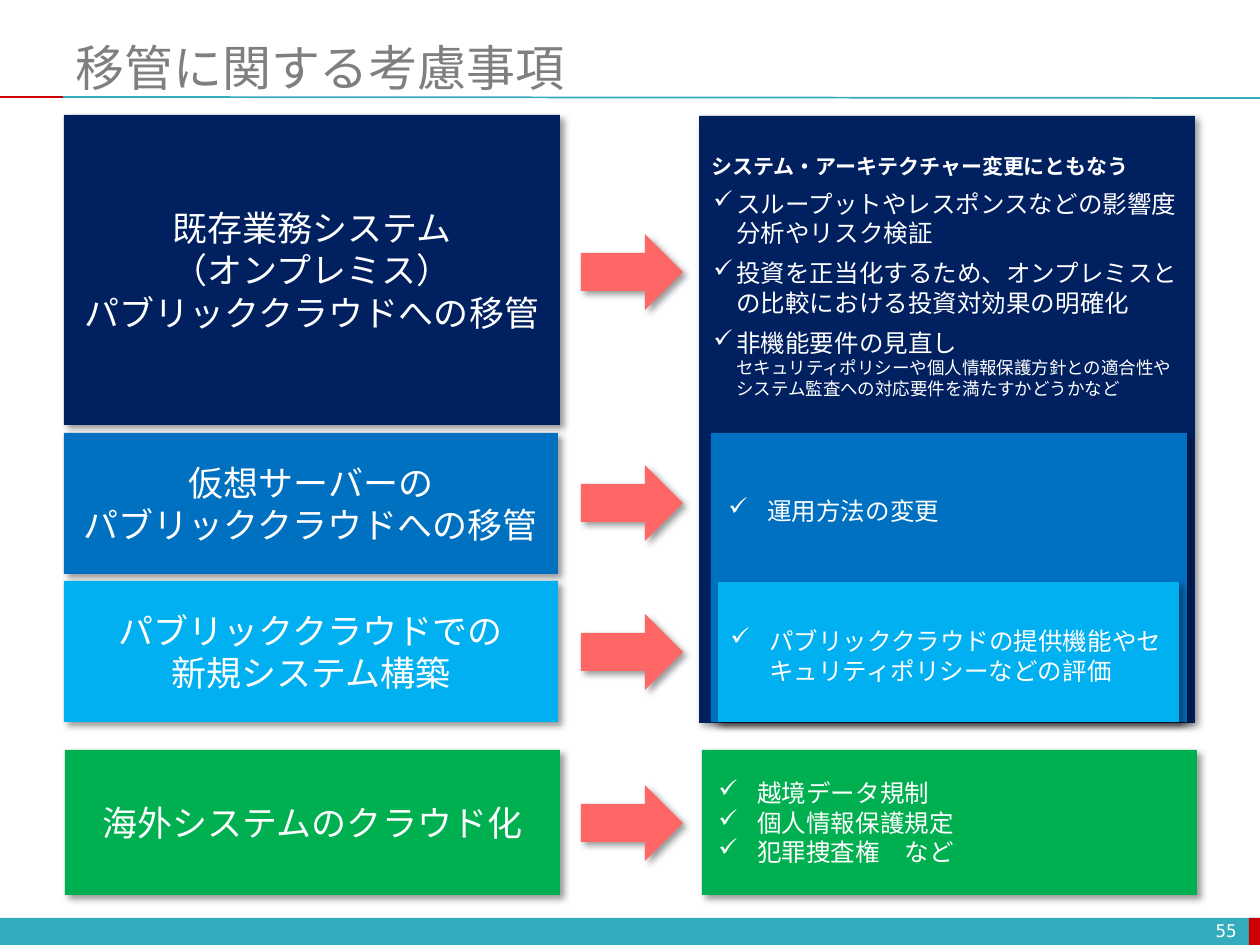
from dataclasses import dataclass

import pptx
import pptx.dml.color
import pptx.enum.shapes
import pptx.enum.text
import pptx.oxml
import pptx.oxml.ns
import pptx.util
from pptx.oxml.xmlchemy import OxmlElement

RGB = pptx.dml.color.RGBColor
KIND = pptx.enum.shapes.MSO_SHAPE
ALIGN = pptx.enum.text.PP_ALIGN
ANCHOR = pptx.enum.text.MSO_ANCHOR

WHITE = RGB(0xFF, 0xFF, 0xFF)
GRAY = RGB(0x7F, 0x7F, 0x7F)
TEAL = RGB(0x33, 0xAC, 0xBD)
RED = RGB(0xCC, 0x00, 0x00)
NAVY = RGB(0x00, 0x20, 0x60)
BLUE = RGB(0x00, 0x70, 0xC0)
SKY = RGB(0x00, 0xB0, 0xF0)
GREEN = RGB(0x00, 0xB0, 0x50)
CORAL = RGB(0xFF, 0x66, 0x66)

FACE = "Noto Sans CJK JP"
SCALE = 914400 / 126
SHADOW = (
    f'<a:effectLst {pptx.oxml.ns.nsdecls("a")}>'
    '<a:outerShdw blurRad="50800" dist="38100" dir="2700000" algn="tl" rotWithShape="0">'
    '<a:srgbClr val="000000"><a:alpha val="40000"/></a:srgbClr>'
    "</a:outerShdw></a:effectLst>"
)


@dataclass(frozen=True)
class Box:
    left: int
    top: int
    width: int
    height: int


@dataclass(frozen=True)
class Line:
    text: str
    size: int = 14
    bold: bool = False
    mark: bool = False
    left: int = 0
    hang: int = 0
    gap: int = 0


@dataclass(frozen=True)
class Step:
    box: Box
    fill: RGB
    lines: tuple[str, ...]
    arrow: int


STEPS = (
    Step(Box(64, 115, 496, 310), NAVY,
         ("既存業務システム", "（オンプレミス）", "パブリッククラウドへの移管"), 234),
    Step(Box(64, 433, 494, 141), BLUE,
         ("仮想サーバーの", "パブリッククラウドへの移管"), 465),
    Step(Box(64, 581, 494, 141), SKY,
         ("パブリッククラウドでの", "新規システム構築"), 614),
    Step(Box(65, 750, 495, 145), GREEN, ("海外システムのクラウド化",), 785),
)

LAYERS = (
    (Box(699, 116, 496, 607), NAVY),
    (Box(711, 433, 476, 289), BLUE),
    (Box(718, 582, 461, 140), SKY),
)


def px(count: int) -> int:
    return round(count * SCALE)


def place(box: Box) -> tuple[int, ...]:
    return tuple(px(n) for n in (box.left, box.top, box.width, box.height))


def block(slide, box: Box, fill: RGB, kind=KIND.RECTANGLE, shade: bool = True):
    """Add a borderless filled shape, by default with a drop shadow."""
    shape = slide.shapes.add_shape(kind, *place(box))
    shape.fill.solid()
    shape.fill.fore_color.rgb = fill
    shape.line.fill.background()
    if shade:
        shape._element.spPr.append(pptx.oxml.parse_xml(SHADOW))
    else:
        shape.shadow.inherit = False
    return shape


def rule(slide, start: tuple[int, int], end: tuple[int, int], color: RGB) -> None:
    line = slide.shapes.add_connector(
        pptx.enum.shapes.MSO_CONNECTOR.STRAIGHT, *map(px, start + end))
    line.line.color.rgb = color
    line.line.width = pptx.util.Pt(1)
    line._element.spPr.append(OxmlElement("a:effectLst"))


def write(shape, lines, *, color: RGB = WHITE, face: str = FACE,
          align=ALIGN.LEFT, anchor=ANCHOR.MIDDLE) -> None:
    frame = shape.text_frame
    frame.word_wrap = True
    frame.vertical_anchor = anchor
    for index, line in enumerate(lines):
        para = frame.add_paragraph() if index else frame.paragraphs[0]
        para.alignment = align
        para.line_spacing = pptx.util.Pt(line.size * 1.2)
        para.space_before = pptx.util.Pt(line.gap)
        props = para._p.get_or_add_pPr()
        props.set("marL", str(px(line.left)))
        props.set("indent", str(-px(line.hang)))
        if line.mark:
            mark = OxmlElement("a:buChar")
            mark.set("char", "✓")
            props.append(mark)
        run = para.add_run()
        run.text = line.text
        font = run.font
        font.size = pptx.util.Pt(line.size)
        font.bold = line.bold
        font.name = face
        font.color.rgb = color
        asian = OxmlElement("a:ea")
        asian.set("typeface", FACE)
        run._r.get_or_add_rPr().append(asian)


def label(slide, box: Box, lines, **style) -> None:
    write(slide.shapes.add_textbox(*place(box)), lines, **style)


def ticks(*texts: str, left: int = 39, hang: int = 39, gap: int = 0) -> list[Line]:
    return [Line(text, mark=True, left=left, hang=hang, gap=gap) for text in texts]


def frame(slide) -> None:
    """Draw the title, its rule and the footer."""
    block(slide, Box(0, 918, 1260, 27), TEAL, shade=False)
    block(slide, Box(1249, 918, 11, 27), RED, shade=False)
    rule(slide, (63, 97), (1260, 98), TEAL)
    rule(slide, (0, 97), (63, 97), RED)
    label(slide, Box(63, 38, 1197, 58), [Line("移管に関する考慮事項", 28)],
          color=GRAY, face="Calibri")
    label(slide, Box(955, 916, 294, 30), [Line("55", 10)],
          face="DejaVu Sans Mono", align=ALIGN.RIGHT)


def main() -> None:
    deck = pptx.Presentation()
    deck.slide_width, deck.slide_height = px(1260), px(945)
    slide = deck.slides.add_slide(deck.slide_layouts[6])
    frame(slide)

    for box, fill in LAYERS:
        block(slide, box, fill)
    change = [
        Line("システム・アーキテクチャー変更にともなう", 12, bold=True),
        *ticks("スループットやレスポンスなどの影響度分析やリスク検証",
               "投資を正当化するため、オンプレミスとの比較における投資対効果の明確化",
               "非機能要件の見直し", left=25, hang=23, gap=6),
        Line("セキュリティポリシーや個人情報保護方針との適合性や"
             "システム監査への対応要件を満たすかどうかなど", 10, left=25),
    ]
    label(slide, Box(699, 147, 496, 261), change, anchor=ANCHOR.TOP)
    label(slide, Box(716, 490, 456, 43), ticks("運用方法の変更"), anchor=ANCHOR.TOP)
    label(slide, Box(718, 620, 470, 72),
          ticks("パブリッククラウドの提供機能やセキュリティポリシーなどの評価"),
          anchor=ANCHOR.TOP)

    for step in STEPS:
        shape = block(slide, step.box, step.fill)
        write(shape, [Line(text, 20) for text in step.lines], align=ALIGN.CENTER)
        block(slide, Box(581, step.arrow, 102, 76), CORAL, KIND.RIGHT_ARROW)

    abroad = block(slide, Box(702, 750, 495, 145), GREEN)
    write(abroad, ticks("越境データ規制", "個人情報保護規定", "犯罪捜査権　など", left=43))

    deck.save("out.pptx")


if __name__ == "__main__":
    main()
